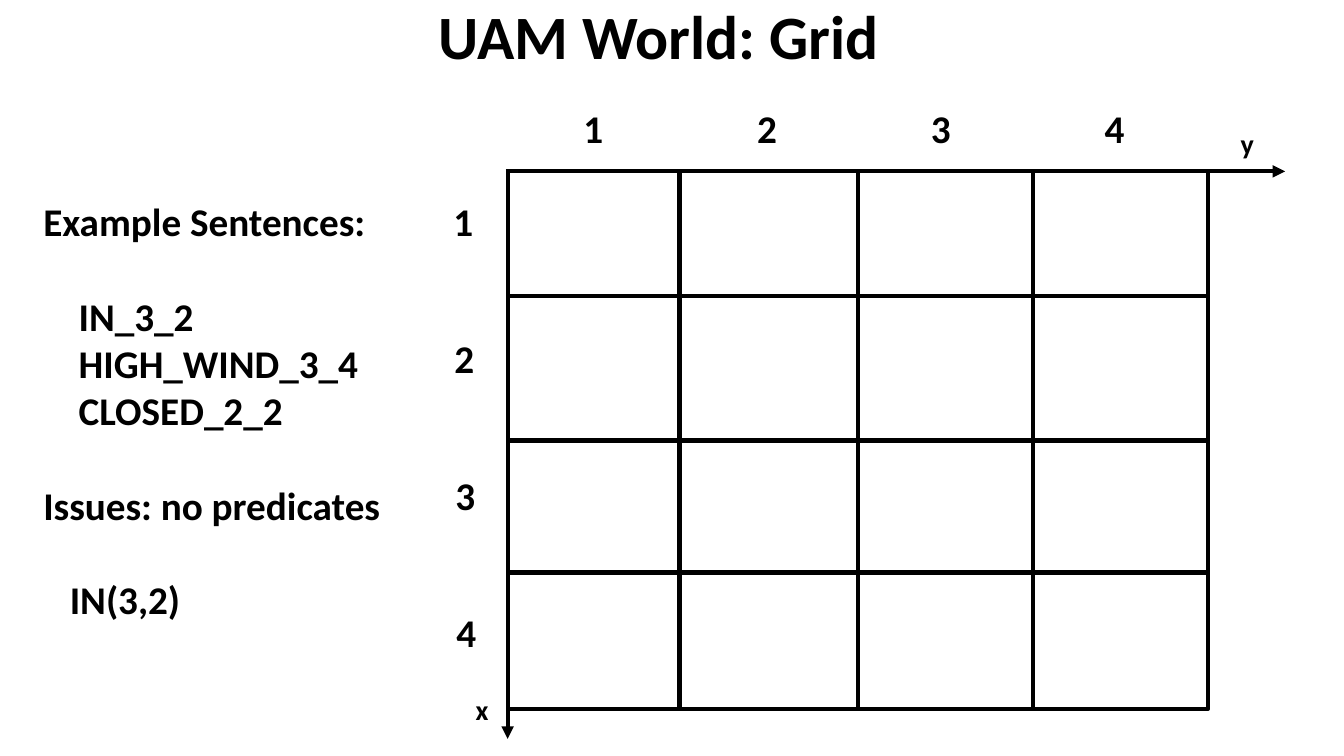
from dataclasses import dataclass

from lxml.etree import SubElement
from pptx import Presentation
from pptx.dml.color import RGBColor
from pptx.enum.shapes import MSO_CONNECTOR, MSO_SHAPE
from pptx.enum.text import MSO_ANCHOR, MSO_AUTO_SIZE, PP_ALIGN
from pptx.oxml.ns import qn
from pptx.util import Pt


@dataclass(frozen=True)
class Theme:
    font: str = "Calibri"
    ink: RGBColor = RGBColor(0, 0, 0)
    title_size: int = 44
    body_size: int = 28
    axis_size: int = 20
    line_width: int = 3
    blank_line: int = 34


THEME = Theme()

GRID_LEFT, GRID_TOP, GRID_WIDTH, GRID_HEIGHT = 362.6, 122.4, 500.2, 384
ROW_LINES = (211.7, 314.6, 409)
COLUMN_LINES = (485.3, 612.7, 738)

# text, left indent, space before
SENTENCES = (
    ("Example Sentences:", 0, 0),
    ("IN_3_2", 25.3, THEME.blank_line),
    ("HIGH_WIND_3_4", 25.3, 0),
    ("CLOSED_2_2", 25.3, 0),
    ("Issues: no predicates", 0, THEME.blank_line),
    ("IN(3,2)", 19, THEME.blank_line),
)


def write(para, text, *, theme, size, align=PP_ALIGN.LEFT, indent=0, before=0, spacing=None):
    para.alignment = align
    para.space_before = Pt(before)
    if spacing:
        para.line_spacing = spacing
    if indent:
        properties = para._p.get_or_add_pPr()
        properties.set("marL", str(Pt(indent)))
        properties.set("indent", "0")
    span = para.add_run()
    span.text = text
    font = span.font
    font.name = theme.font
    font.size = Pt(size)
    font.bold = True
    font.color.rgb = theme.ink


class Sketch:
    """Holds the theme, the slide and the shapes collection being drawn on."""

    def __init__(self, slide, theme):
        self.slide = slide
        self.theme = theme
        self.canvas = slide.shapes

    def start_group(self):
        self.canvas = self.slide.shapes.add_group_shape().shapes

    def end_group(self):
        self.canvas = self.slide.shapes

    def title(self, text, left, top, width, height):
        box = self.slide.shapes.title
        box.left, box.top, box.width, box.height = map(Pt, (left, top, width, height))
        frame = box.text_frame
        frame.auto_size = MSO_AUTO_SIZE.NONE
        frame.vertical_anchor = MSO_ANCHOR.MIDDLE
        write(frame.paragraphs[0], text, theme=self.theme, size=self.theme.title_size,
              align=PP_ALIGN.CENTER, spacing=0.9)

    def text(self, lines, left, top, width, height, size):
        """Add a text box; each line is (text, indent, space before)."""
        box = self.canvas.add_textbox(Pt(left), Pt(top), Pt(width), Pt(height))
        frame = box.text_frame
        frame.word_wrap = False
        frame.auto_size = MSO_AUTO_SIZE.SHAPE_TO_FIT_TEXT
        for number, (text, indent, before) in enumerate(lines):
            para = frame.add_paragraph() if number else frame.paragraphs[0]
            write(para, text, theme=self.theme, size=size, indent=indent, before=before)

    def label(self, text, left, top):
        self.text([(text, 0, 0)], left, top, 28.8, 41, self.theme.body_size)

    def axis_name(self, text, left, top):
        self.text([(text, 0, 0)], left, top, 24, 31.7, self.theme.axis_size)

    def outline(self, left, top, width, height):
        shape = self.canvas.add_shape(MSO_SHAPE.RECTANGLE, Pt(left), Pt(top), Pt(width), Pt(height))
        shape.shadow.inherit = False
        shape.fill.background()
        self.stroke(shape.line)

    def line(self, x1, y1, x2, y2, arrow=False):
        connector = self.canvas.add_connector(MSO_CONNECTOR.STRAIGHT, Pt(x1), Pt(y1), Pt(x2), Pt(y2))
        self.stroke(connector.line)
        properties = connector._element.spPr
        if arrow:
            SubElement(properties.find(qn("a:ln")), qn("a:tailEnd"), type="triangle")
        SubElement(properties, qn("a:effectLst"))

    def stroke(self, line):
        line.color.rgb = self.theme.ink
        line.width = Pt(self.theme.line_width)


def draw_grid(sketch):
    right, bottom = GRID_LEFT + GRID_WIDTH, GRID_TOP + GRID_HEIGHT
    sketch.start_group()
    sketch.outline(GRID_LEFT, GRID_TOP, GRID_WIDTH, GRID_HEIGHT)
    for y in ROW_LINES:
        sketch.line(GRID_LEFT, y, right, y)
    for x in COLUMN_LINES:
        sketch.line(x, GRID_TOP, x, bottom)
    for index in range(4):
        name = str(index + 1)
        sketch.label(name, 316.8 + 0.72 * index, 137.5 + 97.9 * index)
        sketch.label(name, 409.7 + 124.1 * index, 71.3)
    sketch.line(361.4, GRID_TOP, 918, GRID_TOP, arrow=True)
    sketch.line(GRID_LEFT, GRID_TOP, GRID_LEFT, 527.8, arrow=True)
    sketch.axis_name("y", 879.1, 87.1)
    sketch.axis_name("x", 332.6, 491)
    sketch.end_group()


def main():
    deck = Presentation()
    deck.slide_width, deck.slide_height = Pt(960), Pt(540)
    title_only = deck.slide_layouts.get_by_name("Title Only")
    sketch = Sketch(deck.slides.add_slide(title_only), THEME)
    sketch.title("UAM World: Grid", 209.5, -0.7, 522.7, 58.3)
    draw_grid(sketch)
    sketch.text(SENTENCES, 23.8, 137.5, 257.8, 312.5, THEME.body_size)
    deck.save("out.pptx")


if __name__ == "__main__":
    main()
